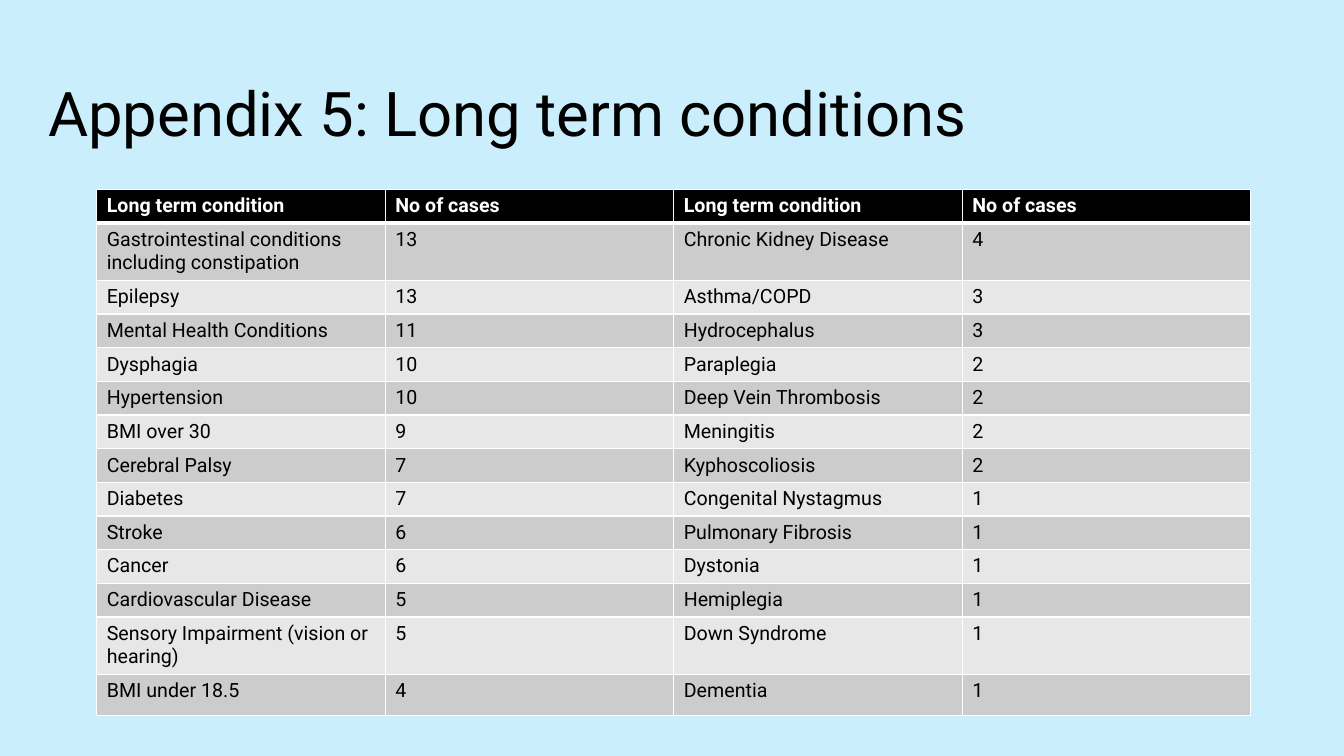
from dataclasses import dataclass

from lxml import etree
from pptx import Presentation
from pptx.dml.color import RGBColor
from pptx.enum import text
from pptx.oxml import ns
from pptx.util import Pt


@dataclass(frozen=True)
class Theme:
    font: str = "Roboto"
    title_size: float = 44
    cell_size: float = 14
    background: str = "CAEEFB"
    ink: str = "000000"
    paper: str = "FFFFFF"
    bands: tuple = ("CCCCCC", "E7E7E7")
    rule: float = 1
    header_rule: float = 3


THEME = Theme()
HEADER = ("Long term condition", "No of cases") * 2
CONDITIONS = [
    ("Gastrointestinal conditions including constipation", 13, "Chronic Kidney Disease", 4),
    ("Epilepsy", 13, "Asthma/COPD", 3),
    ("Mental Health Conditions", 11, "Hydrocephalus", 3),
    ("Dysphagia", 10, "Paraplegia", 2),
    ("Hypertension", 10, "Deep Vein Thrombosis", 2),
    ("BMI over 30", 9, "Meningitis", 2),
    ("Cerebral Palsy", 7, "Kyphoscoliosis", 2),
    ("Diabetes", 7, "Congenital Nystagmus", 1),
    ("Stroke", 6, "Pulmonary Fibrosis", 1),
    ("Cancer", 6, "Dystonia", 1),
    ("Cardiovascular Disease", 5, "Hemiplegia", 1),
    ("Sensory Impairment (vision or hearing)", 5, "Down Syndrome", 1),
    ("BMI under 18.5", 4, "Dementia", 1),
]


def add_run(p, words, size, color, bold=False):
    r = p.add_run()
    r.text = words
    r.font.name = THEME.font
    r.font.size = Pt(size)
    r.font.bold = bold
    r.font.color.rgb = RGBColor.from_string(color)


def add_title(s, box, words):
    sp = s.shapes.add_textbox(*map(Pt, box))
    tf = sp.text_frame
    tf.word_wrap = True
    tf.vertical_anchor = text.MSO_ANCHOR.MIDDLE
    p = tf.paragraphs[0]
    p.line_spacing = 0.9
    add_run(p, words, THEME.title_size, THEME.ink)


def set_borders(cell, top, bottom):
    tc_pr = cell._tc.get_or_add_tcPr()
    widths = {"L": THEME.rule, "R": THEME.rule, "T": top, "B": bottom}
    for side, width in widths.items():
        ln = etree.SubElement(tc_pr, ns.qn(f"a:ln{side}"), w=str(Pt(width)))
        fill = etree.SubElement(ln, ns.qn("a:solidFill"))
        etree.SubElement(fill, ns.qn("a:srgbClr"), val=THEME.paper)


def add_conditions_table(s, box, row_height, last_height):
    rows = [HEADER, *CONDITIONS]
    frame = s.shapes.add_table(len(rows), len(HEADER), *map(Pt, box))
    table = frame.table
    for column in table.columns:
        column.width = Pt(box[2] / len(HEADER))

    for i, row in enumerate(rows):
        # Rows grow to fit their text
        table.rows[i].height = Pt(last_height if i == len(rows) - 1 else row_height)
        is_header = i == 0
        fill = THEME.ink if is_header else THEME.bands[(i - 1) % 2]
        color = THEME.paper if is_header else THEME.ink
        top = THEME.header_rule if i == 1 else THEME.rule
        bottom = THEME.header_rule if is_header else THEME.rule
        for j, value in enumerate(row):
            cell = table.cell(i, j)
            set_borders(cell, top, bottom)
            cell.fill.solid()
            cell.fill.fore_color.rgb = RGBColor.from_string(fill)
            add_run(cell.text_frame.paragraphs[0], str(value),
                    THEME.cell_size, color, is_header)
    frame.height = Pt(box[3])


def main():
    prs = Presentation()
    prs.slide_width, prs.slide_height = Pt(960), Pt(540)
    s = prs.slides.add_slide(prs.slide_layouts[6])
    s.background.fill.solid()
    s.background.fill.fore_color.rgb = RGBColor.from_string(THEME.background)

    # Heading
    add_title(s, (27.4, 31, 828, 104.4), "Appendix 5: Long term conditions")
    # Case counts in two side-by-side lists
    add_conditions_table(s, (69.1, 135.4, 824.4, 375.1), 19.4, 29.5)
    prs.save("out.pptx")


if __name__ == "__main__":
    main()
